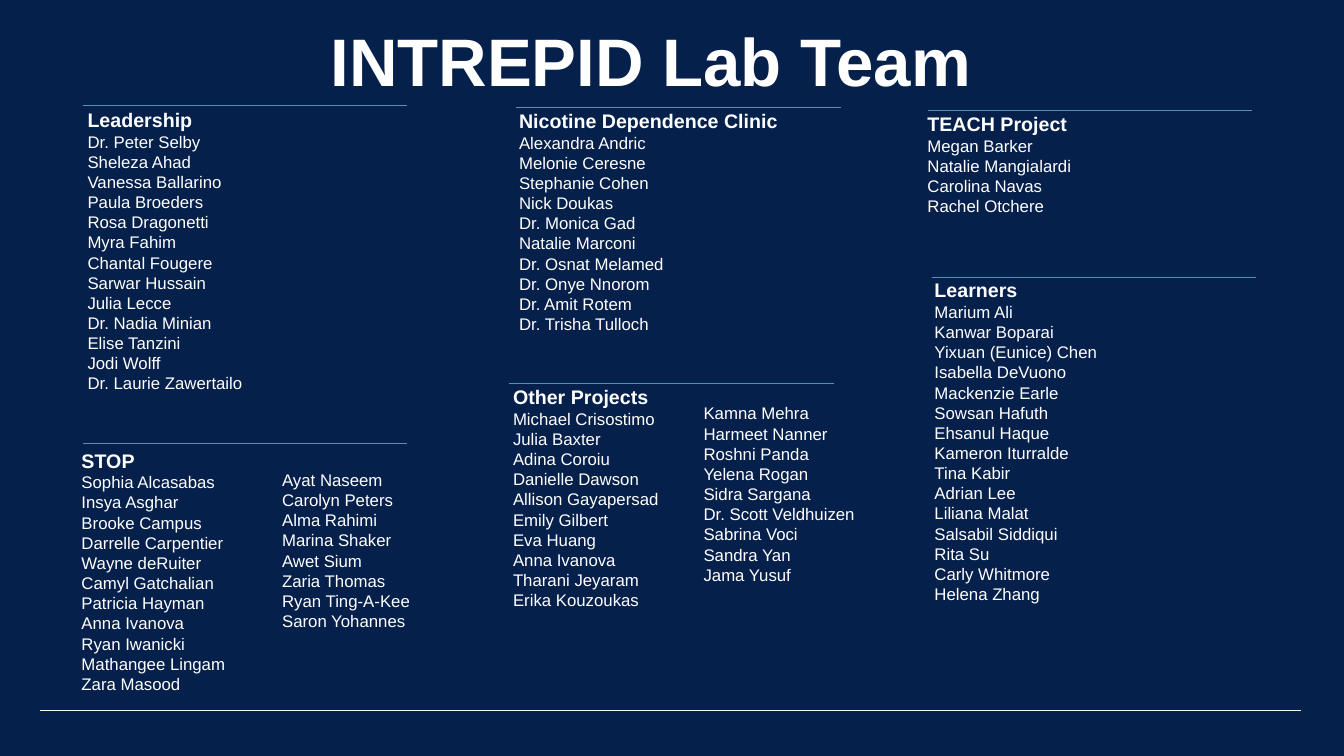
from lxml.etree import SubElement
from pptx import Presentation
from pptx.dml.color import RGBColor
from pptx.enum.shapes import MSO_CONNECTOR as Conn
from pptx.enum.text import PP_ALIGN as Align
from pptx.oxml.ns import qn
from pptx.util import Inches, Pt

NAVY = RGBColor(0x06, 0x20, 0x4C)
WHITE = RGBColor(0xFF, 0xFF, 0xFF)
TEAL = RGBColor(0x54, 0x93, 0xB2)
FONT = "Arial"
LEAD = 1.2
RULE = 3.22

LEADERS = [
    "Dr. Peter Selby", "Sheleza Ahad", "Vanessa Ballarino", "Paula Broeders",
    "Rosa Dragonetti", "Myra Fahim", "Chantal Fougere", "Sarwar Hussain",
    "Julia Lecce", "Dr. Nadia Minian", "Elise Tanzini", "Jodi Wolff",
    "Dr. Laurie Zawertailo",
]
CLINIC = [
    "Alexandra Andric", "Melonie Ceresne", "Stephanie Cohen", "Nick Doukas",
    "Dr. Monica Gad", "Natalie Marconi", "Dr. Osnat Melamed",
    "Dr. Onye Nnorom", "Dr. Amit Rotem", "Dr. Trisha Tulloch",
]
STOP = [
    "Sophia Alcasabas", "Insya Asghar", "Brooke Campus",
    "Darrelle Carpentier", "Wayne deRuiter", "Camyl Gatchalian",
    "Patricia Hayman", "Anna Ivanova", "Ryan Iwanicki", "Mathangee Lingam",
    "Zara Masood",
]
STOP_MORE = [
    "Ayat Naseem", "Carolyn Peters", "Alma Rahimi", "Marina Shaker",
    "Awet Sium", "Zaria Thomas", "Ryan Ting-A-Kee", "Saron Yohannes",
]
OTHER = [
    "Michael Crisostimo", "Julia Baxter", "Adina Coroiu", "Danielle Dawson",
    "Allison Gayapersad", "Emily Gilbert", "Eva Huang", "Anna Ivanova",
    "Tharani Jeyaram", "Erika Kouzoukas",
]
OTHER_MORE = [
    "Kamna Mehra", "Harmeet Nanner", "Roshni Panda", "Yelena Rogan",
    "Sidra Sargana", "Dr. Scott Veldhuizen", "Sabrina Voci", "Sandra Yan",
    "Jama Yusuf",
]
TEACH = [
    "Megan Barker", "Natalie Mangialardi", "Carolina Navas", "Rachel Otchere",
]
LEARNERS = [
    "Marium Ali", "Kanwar Boparai", "Yixuan (Eunice) Chen",
    "Isabella DeVuono", "Mackenzie Earle", "Sowsan Hafuth", "Ehsanul Haque",
    "Kameron Iturralde", "Tina Kabir", "Adrian Lee", "Liliana Malat",
    "Salsabil Siddiqui", "Rita Su", "Carly Whitmore", "Helena Zhang",
]

GROUPS = [
    ("Leadership", LEADERS, (0.77, 1.02, 4.04, 2.96)),
    ("Nicotine Dependence Clinic", CLINIC, (5.05, 1.03, 4.04, 2.36)),
    ("STOP", STOP, (0.71, 4.4, 2.15, 2.56)),
    ("", STOP_MORE, (2.7, 4.61, 2.03, 1.72)),
    ("Other Projects", OTHER, (4.99, 3.77, 1.97, 2.36)),
    ("", OTHER_MORE, (6.88, 3.95, 2.07, 2.32)),
    ("TEACH Project", TEACH, (9.1, 1.06, 2.58, 1.75)),
    ("Learners", LEARNERS, (9.17, 2.71, 2.36, 3.37)),
]
RULES = [
    (0.82, 1.05), (5.12, 1.07), (9.2, 1.1),
    (9.24, 2.75), (5.05, 3.8), (0.82, 4.4),
]


def add_text(slide, box, lines, align=Align.LEFT):
    """Add a text box of (text, size, bold) lines."""
    frame = slide.shapes.add_textbox(*map(Inches, box)).text_frame
    frame.word_wrap = True
    for i, (text, size, bold) in enumerate(lines):
        para = frame.add_paragraph() if i else frame.paragraphs[0]
        para.alignment = align
        para.line_spacing = Pt(size * LEAD)
        run = para.add_run()
        run.text = text
        run.font.name = FONT
        run.font.size = Pt(size)
        run.font.bold = bold
        run.font.color.rgb = WHITE


def add_group(slide, head, names, box):
    """Add a list of names under an optional heading."""
    lines = [(head, 14, True)] if head else []
    add_text(slide, box, lines + [(name, 12, False) for name in names])


def add_rule(slide, left, top, width, color):
    """Add a thin horizontal line."""
    ends = map(Inches, (left, top, left + width, top))
    rule = slide.shapes.add_connector(Conn.STRAIGHT, *ends)
    rule.line.color.rgb = color
    rule.line.width = Pt(0.75)
    SubElement(rule.line._get_or_add_ln().getparent(), qn("a:effectLst"))


def main():
    """Build the team slide."""
    deck = Presentation()
    deck.slide_width, deck.slide_height = Inches(13.33), Inches(7.5)
    slide = deck.slides.add_slide(deck.slide_layouts[6])
    fill = slide.background.fill
    fill.solid()
    fill.fore_color.rgb = NAVY
    add_rule(slide, 0.4, 7.05, 12.5, WHITE)
    title = [("INTREPID Lab Team ", 48, True)]
    add_text(slide, (0.77, 0.14, 11.56, 0.91), title, Align.CENTER)
    for head, names, box in GROUPS:
        add_group(slide, head, names, box)
    for left, top in RULES:
        add_rule(slide, left, top, RULE, TEAL)
    deck.save("out.pptx")


if __name__ == "__main__":
    main()
